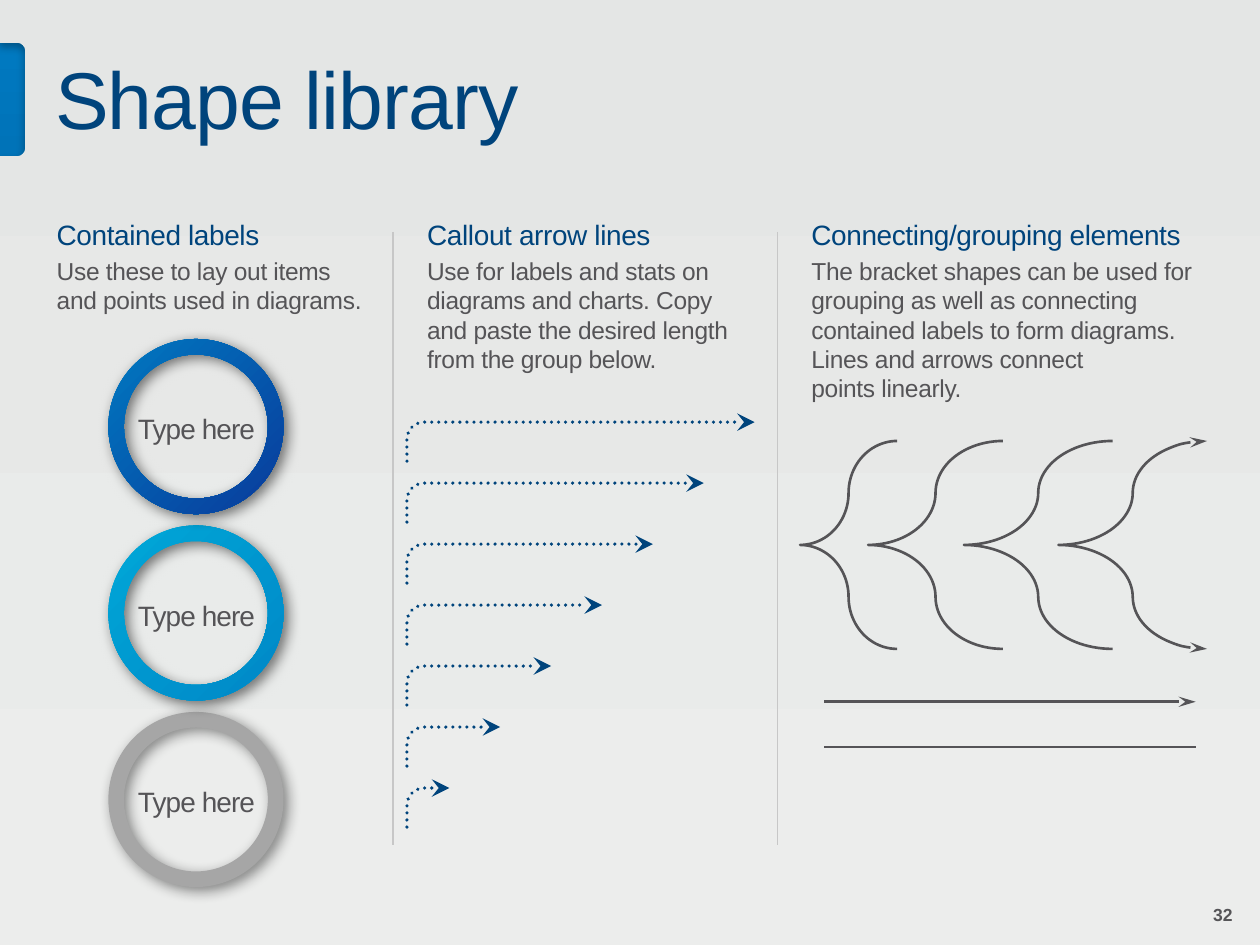
from dataclasses import dataclass

from lxml import etree
from pptx import Presentation
from pptx.dml.color import RGBColor
from pptx.enum import dml, shapes, text
from pptx.oxml.ns import qn
from pptx.util import Inches, Pt


@dataclass(frozen=True)
class Theme:
    font: str = "Arial"
    navy: str = "00447C"
    gray: str = "555457"
    rule: str = "C7C7C7"
    backdrop: tuple = ((5, "0079C0"), (85, "00457C"))
    panel: tuple = ((0, "E4E6E5"), (100, "ECEDEC"))
    title: int = 46
    heading: int = 16
    body: int = 14
    number: int = 10


THEME = Theme()

TITLE = "Shape library"
PAGE_NUMBER = "32"
COLUMNS = [  # left, heading width, body width, body height, heading, body
    (0.45, 2.34, 2.78, 0.47, "Contained labels",
     "Use these to lay out items \nand points used in diagrams."),
    (3.39, 2.78, 2.5, 0.94, "Callout arrow lines",
     "Use for labels and stats on diagrams and charts. Copy and paste "
     "the desired length from the group below."),
    (6.44, 3.37, 3.17, 1.18, "Connecting/grouping elements",
     "The bracket shapes can be used for grouping as well as connecting "
     "contained labels to form diagrams. Lines and arrows connect \npoints linearly."),
]
DIVIDERS = [3.12, 6.17]
RINGS = [  # label, fill colours, shadow opacity
    ("Type here", ("0079C1", "093A9B"), 55),
    ("Type here", ("00A8D8", "0087C7"), 55),
    ("Type here", ("A6A6A6",), 45),
]
CALLOUT_COUNT = 7
BRACES = [  # left, width, curve, arrowheads
    (6.35, 0.77, 0.54, ()),
    (6.89, 1.07, 0.388, ()),
    (7.65, 1.18, 0.352, ()),
    (8.4, 1.18, 0.352, ("headEnd", "tailEnd")),
]
STRAIGHT_LINES = [(5.57, ("tailEnd",)), (5.93, ())]


def set_gradient(fill, stops, angle):
    """Fill with two (percent, colour) stops; angle runs clockwise."""
    fill.gradient()
    fill.gradient_angle = 360 - angle
    for stop, (percent, color) in zip(fill.gradient_stops, stops):
        stop.position = percent / 100
        stop.color.rgb = RGBColor.from_string(color)


def set_line(line, color, width, ends=(), head_width="med"):
    line.color.rgb = RGBColor.from_string(color)
    line.width = Pt(width)
    for end in ends:
        etree.SubElement(line._get_or_add_ln(), qn(f"a:{end}"),
                         type="stealth", w=head_width, len="lg")


def add_shadow(shape, opacity, blur, distance, angle):
    shape.shadow.inherit = False
    effects = shape._element.spPr.find(qn("a:effectLst"))
    shadow = etree.SubElement(
        effects, qn("a:outerShdw"), blurRad=str(Pt(blur)), dist=str(Pt(distance)),
        dir=str(angle * 60000), algn="ctr", rotWithShape="0")
    color = etree.SubElement(shadow, qn("a:srgbClr"), val="000000")
    etree.SubElement(color, qn("a:alpha"), val=str(opacity * 1000))


def add_text(parent, area, words, size, color, spacing=0, inset=(0, 0),
             align=text.PP_ALIGN.LEFT, anchor=text.MSO_ANCHOR.TOP, bold=False):
    """Inset is (sides, top and bottom); spacing is in hundredths of a point."""
    box = parent.add_textbox(*map(Inches, area))
    frame = box.text_frame
    frame.word_wrap = True
    frame.vertical_anchor = anchor
    frame.margin_left = frame.margin_right = Inches(inset[0])
    frame.margin_top = frame.margin_bottom = Inches(inset[1])
    para = frame.paragraphs[0]
    para.text = words
    para.alignment = align
    para.font.name = THEME.font
    para.font.size = Pt(size)
    para.font.bold = bold
    para.font.color.rgb = RGBColor.from_string(color)
    for span in para.runs:
        span._r.get_or_add_rPr().set("spc", str(spacing))


def add_straight(parent, start, end, color, width, ends=()):
    line = parent.add_connector(shapes.MSO_CONNECTOR.STRAIGHT,
                                *map(Inches, start + end))
    set_line(line.line, color, width, ends)
    etree.SubElement(line._element.spPr, qn("a:effectLst"))


def add_outline(parent, start, segments, close):
    """Each segment holds one point for a line or three for a cubic curve."""
    builder = parent.build_freeform(*map(Inches, start))
    points = [(Inches(x), Inches(y)) for segment in segments for x, y in segment]
    builder.add_line_segments(points, close=close)
    shape = builder.convert_to_shape()
    shape.shadow.inherit = False
    steps = iter(list(shape._element.iter(qn("a:lnTo"))))
    for segment in segments:
        parts = [next(steps) for _ in segment]
        if len(parts) == 3:
            curve = etree.Element(qn("a:cubicBezTo"))
            parts[0].addprevious(curve)
            for part in parts:
                curve.append(part[0])
                part.getparent().remove(part)
    return shape


def add_panel(parent):
    top, bottom, right, radius = 0.34, 1.24, 0.2, 0.06
    inner, bend = right - radius, right - radius / 2
    segments = [
        [(0, top)], [(inner, top)],
        [(bend, top), (right, top + radius / 2), (right, top + radius)],
        [(right, bottom - radius)],
        [(right, bottom - radius / 2), (bend, bottom), (inner, bottom)],
        [(0, bottom)], [(0, 7.5)], [(10, 7.5)], [(10, 0)]]
    panel = add_outline(parent, (0, 0), segments, close=True)
    set_gradient(panel.fill, THEME.panel, 90)
    panel.line.fill.background()
    add_shadow(panel, 30, 4, 3, 90)


def add_ring(parent, top, label, colors, opacity):
    group = parent.add_group_shape().shapes
    size = 1.39
    ring = group.add_shape(shapes.MSO_SHAPE.DONUT,
                           *map(Inches, (0.86, top, size, size)))
    ring.adjustments[0] = 0.089
    if len(colors) == 1:
        ring.fill.solid()
        ring.fill.fore_color.rgb = RGBColor.from_string(colors[0])
    else:
        set_gradient(ring.fill, zip((0, 100), colors), 45)
    ring.line.fill.background()
    add_shadow(ring, opacity, 8, 3, 45)
    add_text(group, (0.93, top + 0.42, 1.26, 0.58), label, THEME.heading, THEME.gray,
             -50, (0.1, 0.05), text.PP_ALIGN.CENTER, text.MSO_ANCHOR.MIDDLE)


def add_callout(parent, top, right):
    left, drop, radius = 3.23, 0.31, 0.14
    segments = [
        [(left, top + radius)],
        [(left, top + 0.06), (left + 0.06, top), (left + radius, top)],
        [(right, top)]]
    callout = add_outline(parent, (left, top + drop), segments, close=False)
    callout.fill.background()
    callout.line.dash_style = dml.MSO_LINE.ROUND_DOT
    callout.line._get_or_add_ln().set("cap", "rnd")
    set_line(callout.line, THEME.navy, 2, ("tailEnd",), "lg")


def add_brace(parent, left, width, curve, ends):
    brace = parent.add_shape(shapes.MSO_SHAPE.LEFT_BRACE,
                             *map(Inches, (left, 3.5, width, 1.65)))
    brace.adjustments[0] = curve
    brace.adjustments[1] = 0.5
    brace.fill.background()
    brace.shadow.inherit = False
    set_line(brace.line, THEME.gray, 1.5, ends)


def main():
    deck = Presentation()
    deck.slide_width, deck.slide_height = Inches(10), Inches(7.5)
    page = deck.slides.add_slide(deck.slide_layouts[6])
    items = page.shapes
    set_gradient(page.background.fill, THEME.backdrop, 90)
    add_panel(items)
    add_text(items, (6.76, 7.12, 3.12, 0.27), PAGE_NUMBER, THEME.number, THEME.gray,
             inset=(0.1, 0.05), align=text.PP_ALIGN.RIGHT,
             anchor=text.MSO_ANCHOR.BOTTOM, bold=True)
    for left, heading_width, width, height, heading, body in COLUMNS:
        add_text(items, (left, 1.73, heading_width, 0.33), heading,
                 THEME.heading, THEME.navy, -20)
        add_text(items, (left, 2.03, width, height), body,
                 THEME.body, THEME.gray, -20)
    dividers = items.add_group_shape().shapes
    for x in DIVIDERS:
        add_straight(dividers, (x, 1.84), (x, 6.71), THEME.rule, 0.75)
    add_text(items, (0.34, 0.34, 9, 0.88), TITLE, THEME.title, THEME.navy,
             -50, (0.1, 0.05))
    for i in range(CALLOUT_COUNT):
        add_callout(items, 3.35 + 0.484 * i, 5.99 - 0.404 * i)
    for i, ring in enumerate(reversed(RINGS)):
        add_ring(items, 5.65 - 1.48 * i, *ring)
    for brace in BRACES:
        add_brace(items, *brace)
    for y, ends in STRAIGHT_LINES:
        add_straight(items, (6.54, y), (9.49, y), THEME.gray, 1.5, ends)
    deck.save("out.pptx")


if __name__ == "__main__":
    main()
